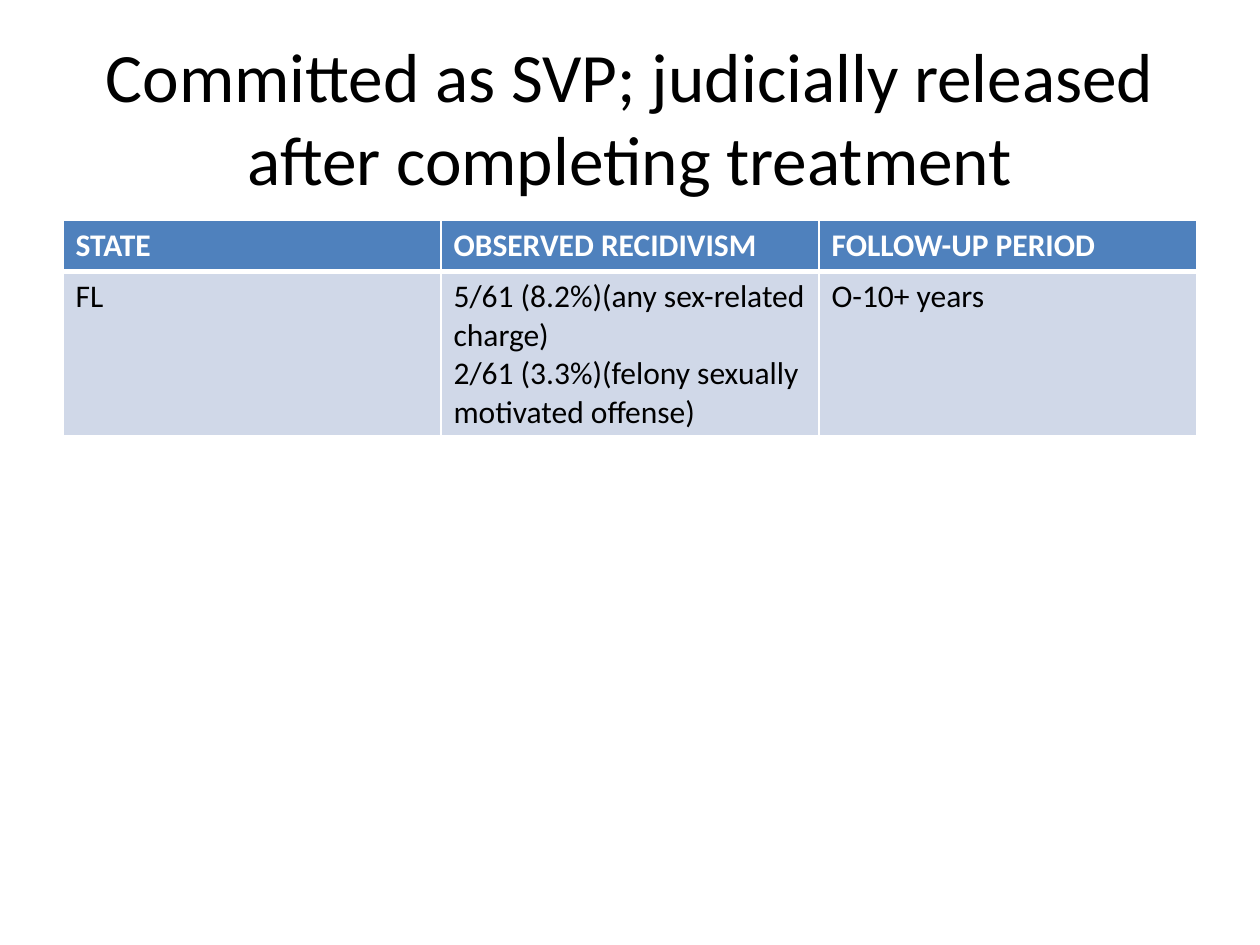
from lxml.etree import SubElement
from pptx import Presentation
from pptx.dml.color import RGBColor
from pptx.enum.text import MSO_ANCHOR, PP_ALIGN
from pptx.oxml.ns import qn
from pptx.util import Pt

TITLE = "Committed as SVP; judicially released after completing treatment"
ROWS = [
    ["STATE", "OBSERVED RECIDIVISM", "FOLLOW-UP PERIOD"],
    [
        "FL",
        "5/61 (8.2%)(any sex-related charge)\n2/61 (3.3%)(felony sexually motivated offense)",
        "O-10+ years",
    ],
]
COLORS = {"header": "4F81BD", "body": "D0D8E8", "white": "FFFFFF", "black": "000000"}
TITLE_FONT = {"name": "Calibri", "size": Pt(39.6), "bold": False}
HEADER_FONT = {"name": "Calibri", "size": Pt(18), "bold": True}
BODY_FONT = {**HEADER_FONT, "bold": False}
LEFT, WIDTH = 36, 648
TITLE_TOP, TITLE_HEIGHT = 21.6, 90
TABLE_TOP, ROW_HEIGHT = 126, 29.2
THIN, THICK = 1, 3


def format_text(text_frame, font_values, color):
    for paragraph in text_frame.paragraphs:
        for run in paragraph.runs:
            for name, value in font_values.items():
                setattr(run.font, name, value)
            run.font.color.rgb = RGBColor.from_string(COLORS[color])


def add_borders(cell, widths):
    """Draw white borders; they must precede the fill in the cell properties."""
    properties = cell._tc.get_or_add_tcPr()
    for side, width in widths.items():
        line = SubElement(properties, qn(f"a:ln{side}"), w=str(Pt(width)))
        fill = SubElement(line, qn("a:solidFill"))
        SubElement(fill, qn("a:srgbClr"), val=COLORS["white"])


def add_title(slide):
    box = slide.shapes.add_textbox(Pt(LEFT), Pt(TITLE_TOP), Pt(WIDTH), Pt(TITLE_HEIGHT))
    frame = box.text_frame
    frame.word_wrap = True
    frame.vertical_anchor = MSO_ANCHOR.MIDDLE
    frame.text = TITLE
    frame.paragraphs[0].alignment = PP_ALIGN.CENTER
    format_text(frame, TITLE_FONT, "black")


def add_recidivism_table(slide):
    table = slide.shapes.add_table(
        len(ROWS), len(ROWS[0]), Pt(LEFT), Pt(TABLE_TOP), Pt(WIDTH), Pt(ROW_HEIGHT * len(ROWS))
    ).table
    for row_index, row in enumerate(ROWS):
        is_header = row_index == 0
        for column_index, text in enumerate(row):
            cell = table.cell(row_index, column_index)
            cell.text = text
            format_text(
                cell.text_frame,
                HEADER_FONT if is_header else BODY_FONT,
                "white" if is_header else "black",
            )
            top = THIN if is_header else THICK
            bottom = THICK if is_header else THIN
            add_borders(cell, {"L": THIN, "R": THIN, "T": top, "B": bottom})
            cell.fill.solid()
            fill_color = COLORS["header" if is_header else "body"]
            cell.fill.fore_color.rgb = RGBColor.from_string(fill_color)


def main():
    presentation = Presentation()
    presentation.slide_width, presentation.slide_height = Pt(720), Pt(540)
    slide = presentation.slides.add_slide(presentation.slide_layouts[6])
    add_title(slide)
    add_recidivism_table(slide)
    presentation.save("out.pptx")


if __name__ == "__main__":
    main()
